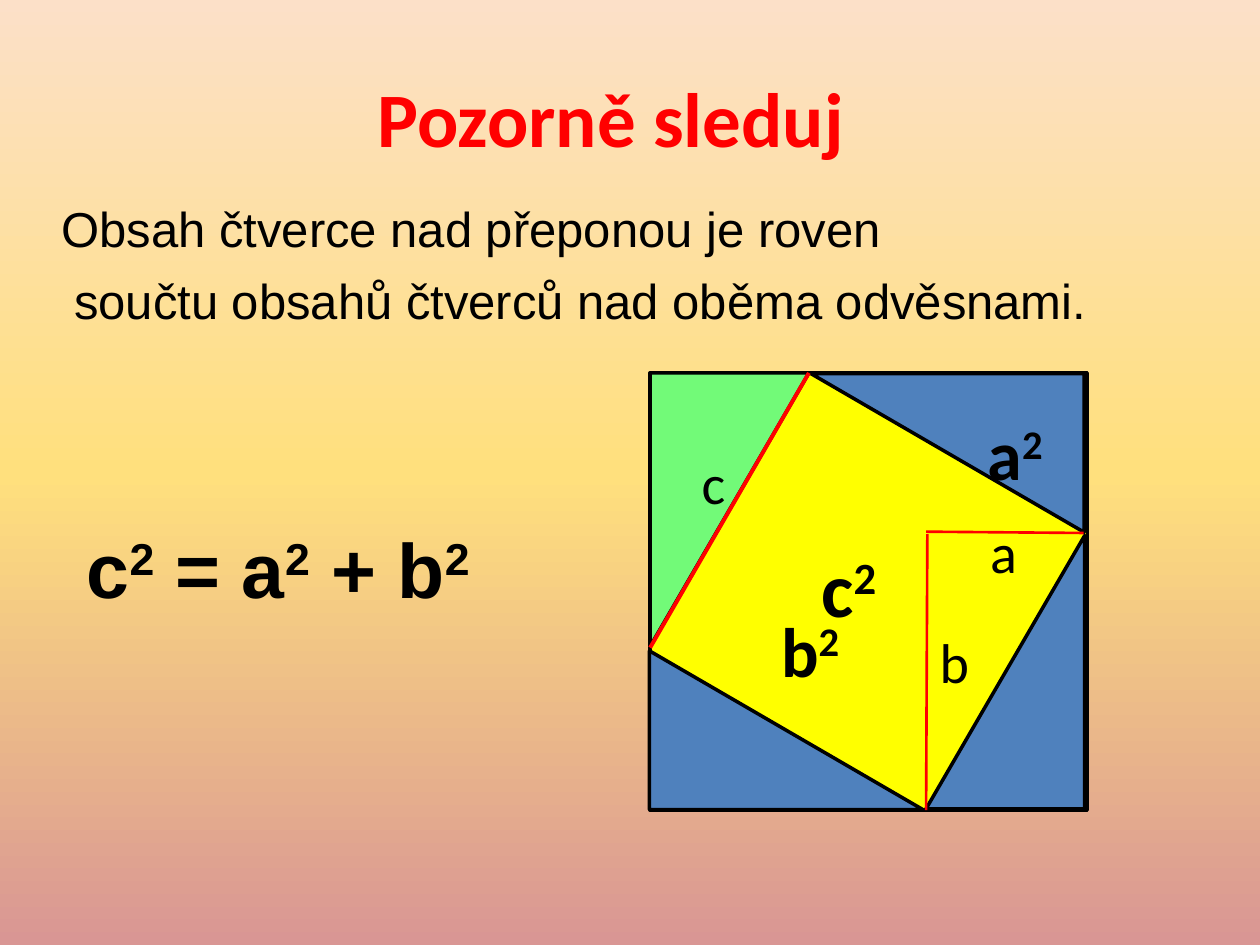
from copy import deepcopy

from lxml import etree
from pptx import Presentation
from pptx.dml.color import RGBColor
from pptx.enum.shapes import MSO_CONNECTOR, MSO_SHAPE
from pptx.enum.text import MSO_ANCHOR, MSO_AUTO_SIZE, PP_ALIGN
from pptx.oxml.ns import qn
from pptx.util import Inches, Pt

RECTANGLE = MSO_SHAPE.RECTANGLE
RIGHT_TRIANGLE = MSO_SHAPE.RIGHT_TRIANGLE
STRAIGHT = MSO_CONNECTOR.STRAIGHT
MIDDLE = MSO_ANCHOR.MIDDLE
TOP = MSO_ANCHOR.TOP
CENTER = PP_ALIGN.CENTER
LEFT = PP_ALIGN.LEFT
GROW = MSO_AUTO_SIZE.SHAPE_TO_FIT_TEXT
FIXED = MSO_AUTO_SIZE.NONE

BLACK = RGBColor(0x00, 0x00, 0x00)
RED = RGBColor(0xFF, 0x00, 0x00)
YELLOW = RGBColor(0xFF, 0xFF, 0x00)
BLUE = RGBColor(0x4F, 0x81, 0xBD)
GREEN = RGBColor(0x72, 0xFA, 0x78)
PEACH = RGBColor(0xFC, 0xE0, 0xC8)
SAND = RGBColor(0xFF, 0xE0, 0x7D)
ROSE = RGBColor(0xD9, 0x96, 0x94)

LEG_A, LEG_B = 1.26, 2.17
SQUARE_LEFT, SQUARE_TOP, SQUARE_SIDE = 5.16, 2.96, 3.47


class SlideBuilder:
    outline_width = 2

    def __init__(self, slide):
        self.slide = slide

    def background(self, colors):
        """Spread three colours evenly from top to bottom."""
        fill = self.slide.background.fill
        fill.gradient()
        fill.gradient_angle = 270
        stop_list = self.slide.element.find(".//" + qn("a:gsLst"))
        stop_list.insert(1, deepcopy(stop_list[0]))
        for index, (stop, color) in enumerate(zip(fill.gradient_stops, colors)):
            stop.position = index / (len(colors) - 1)
            stop.color.rgb = color

    def text(self, content, box, size, font="Calibri", color=BLACK, bold=False,
             wrap=True, anchor=TOP, align=LEFT, auto_size=GROW):
        """Add text; parts between ^ marks are superscript."""
        shape = self.slide.shapes.add_textbox(*map(Inches, box))
        frame = shape.text_frame
        frame_format = {"word_wrap": wrap, "auto_size": auto_size,
                        "vertical_anchor": anchor}
        for name, value in frame_format.items():
            setattr(frame, name, value)
        paragraph = frame.paragraphs[0]
        paragraph.alignment = align
        run_format = {"name": font, "size": Pt(size), "bold": bold}
        for index, part in enumerate(content.split("^")):
            if not part:
                continue
            run = paragraph.add_run()
            run.text = part
            for name, value in run_format.items():
                setattr(run.font, name, value)
            run.font.color.rgb = color
            if index % 2:
                run.font._element.set("baseline", "30000")

    def shape(self, kind, box, color, rotation=0, flip=False):
        shape = self.slide.shapes.add_shape(kind, *map(Inches, box))
        shape.shadow.inherit = False
        shape.rotation = rotation
        if flip:
            shape.element.spPr.find(qn("a:xfrm")).set("flipH", "1")
        shape.fill.solid()
        shape.fill.fore_color.rgb = color
        shape.line.color.rgb = BLACK
        shape.line.width = Pt(self.outline_width)

    def line(self, start, end, width):
        connector = self.slide.shapes.add_connector(
            STRAIGHT, *map(Inches, start + end))
        connector.line.color.rgb = RED
        connector.line.width = Pt(width)
        etree.SubElement(connector.element.spPr, qn("a:effectLst"))


def main():
    presentation = Presentation()
    presentation.slide_width = Inches(10)
    presentation.slide_height = Inches(7.5)
    builder = SlideBuilder(
        presentation.slides.add_slide(presentation.slide_layouts[6]))
    builder.background([PEACH, SAND, ROSE])

    # Title
    builder.text("Pozorně sleduj", (0.35, 0.3, 9, 1.25), 44, color=RED, bold=True,
                 anchor=MIDDLE, align=CENTER, auto_size=FIXED)

    # Square with a right triangle in each corner
    builder.shape(RECTANGLE, (SQUARE_LEFT, SQUARE_TOP, SQUARE_SIDE, SQUARE_SIDE),
                  YELLOW)
    triangles = [
        (5.61, 4.71, BLUE, 90),
        (7.35, 4.25, BLUE, 0),
        (6.89, 2.51, BLUE, 270),
        (SQUARE_LEFT, SQUARE_TOP, GREEN, 180),
    ]
    for left, top, color, rotation in triangles:
        builder.shape(RIGHT_TRIANGLE, (left, top, LEG_A, LEG_B), color, rotation,
                      flip=True)
    builder.line((SQUARE_LEFT, 5.14), (SQUARE_LEFT + LEG_A, SQUARE_TOP), 2.25)

    # Theorem and formula
    statements = [
        ("Obsah čtverce nad přeponou je roven", (0.39, 1.53, 6.79, 0.57), 28, False),
        ("součtu obsahů čtverců nad oběma odvěsnami.", (0.49, 2.1, 8.29, 0.57),
         28, False),
        ("c^2^ = a^2^ + b^2", (0.59, 4.09, 3.36, 0.84), 44, True),
    ]
    for content, box, size, bold in statements:
        builder.text(content, box, size, font="Arial", bold=bold, wrap=False)

    # Side labels
    for content, left, top in [("c", 5.47, 3.51), ("a", 7.76, 4.06),
                               ("b", 7.36, 4.93)]:
        builder.text(content, (left, top, 0.39, 0.64), 32)

    # Area labels
    builder.text("c^2", (6.42, 4.24, 0.89, 0.84), 44, bold=True)
    builder.text("a^2", (7.74, 3.21, 0.72, 0.77), 40, bold=True, wrap=False)
    builder.text("b^2", (6.1, 4.77, 0.75, 0.77), 40, bold=True, wrap=False)

    # Legs of the inner triangle
    builder.line((7.35, 4.22), (8.6, 4.23), 1.5)
    builder.line((7.36, 4.24), (7.35, 6.43), 1.5)

    presentation.save("out.pptx")


if __name__ == "__main__":
    main()
